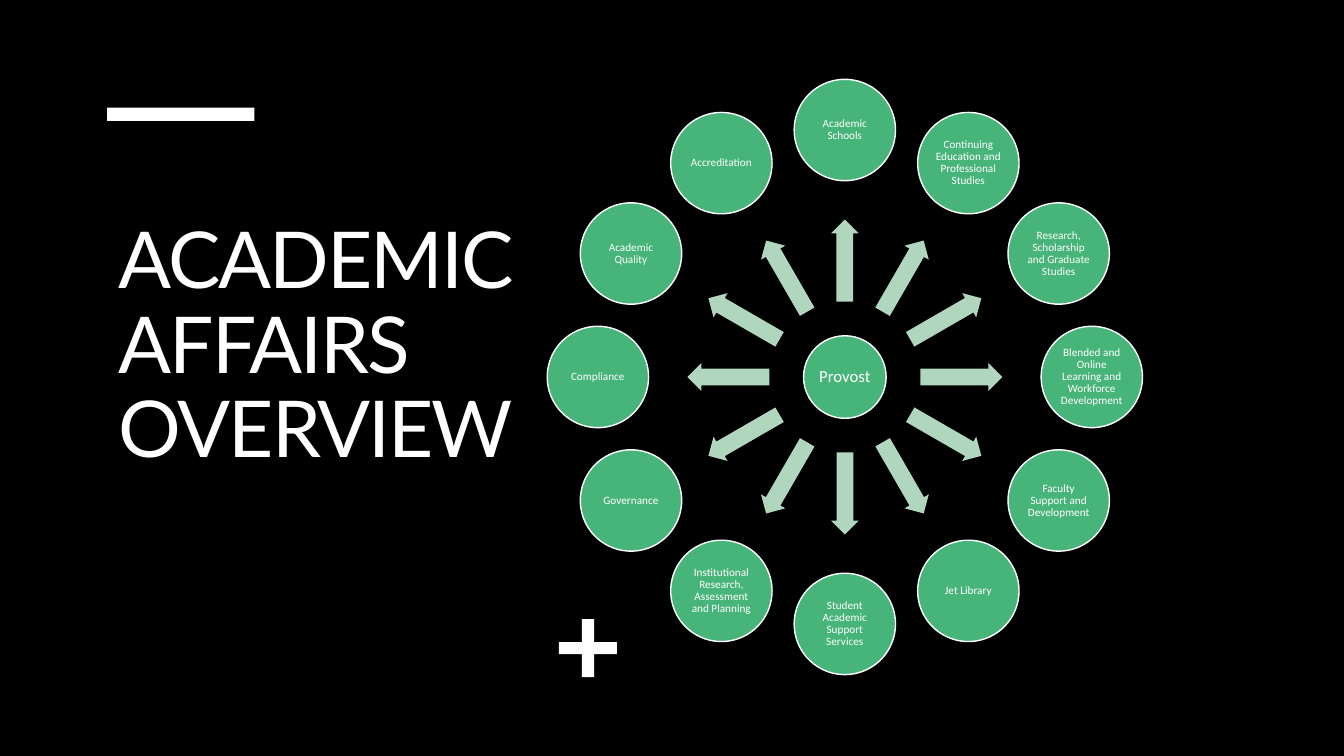
"""Draw a hub-and-spoke overview of academic affairs."""
from math import cos, radians, sin
from typing import Any, NamedTuple

from pptx import Presentation
from pptx.dml.color import RGBColor
from pptx.enum.shapes import MSO_SHAPE as Kind
from pptx.enum.text import MSO_ANCHOR as Anchor, PP_ALIGN as Align
from pptx.util import Pt

BLACK = RGBColor(0x00, 0x00, 0x00)
WHITE = RGBColor(0xFF, 0xFF, 0xFF)
GREEN = RGBColor(0x47, 0xB4, 0x79)
PALE = RGBColor(0xB1, 0xD6, 0xBE)

HUB_X, HUB_Y = 603.5, 269.3
RING, REACH = 176.4, 83.2
UNITS = (
    "Academic Schools",
    "Continuing Education and Professional Studies",
    "Research, Scholarship and Graduate Studies",
    "Blended and Online Learning and Workforce Development",
    "Faculty Support and Development",
    "Jet Library",
    "Student Academic Support Services",
    "Institutional Research, Assessment and Planning",
    "Governance",
    "Compliance",
    "Academic Quality",
    "Accreditation",
)


class Mark(NamedTuple):
    """A plain filled shape, placed by its middle."""
    kind: Kind
    x: float
    y: float
    width: float
    height: float
    fill: RGBColor
    turn: float = 0
    bends: tuple[float, ...] = ()


class Disc(NamedTuple):
    """A labelled circle, placed by its middle."""
    text: str
    x: float
    y: float
    size: float
    points: float
    inset: float


def apply(target: Any, values: dict[str, Any]) -> None:
    """Set each named value on the target."""
    for name, value in values.items():
        setattr(target, name, value)


def draw_mark(shapes: Any, mark: Mark) -> Any:
    """Add one filled shape without an outline."""
    shape = shapes.add_shape(
        mark.kind, Pt(mark.x - mark.width / 2), Pt(mark.y - mark.height / 2),
        Pt(mark.width), Pt(mark.height))
    shape.shadow.inherit = False
    shape.rotation = mark.turn
    shape.fill.solid()
    shape.fill.fore_color.rgb = mark.fill
    shape.line.fill.background()
    for place, bend in enumerate(mark.bends):
        shape.adjustments[place] = bend
    return shape


def write(shape: Any, text: str, face: str, points: float,
          align: Align, frame: dict[str, Any]) -> Any:
    """Put white text in a shape and return its run."""
    apply(shape.text_frame, {"word_wrap": True, **frame})
    para = shape.text_frame.paragraphs[0]
    apply(para, {"alignment": align, "line_spacing": 0.9})
    run = para.add_run()
    run.text = text
    apply(run.font, {"name": face, "size": Pt(points)})
    run.font.color.rgb = WHITE
    return run


def draw_disc(shapes: Any, disc: Disc) -> None:
    """Add one green circle with a white rim and a label."""
    shape = draw_mark(shapes, Mark(
        Kind.OVAL, disc.x, disc.y, disc.size, disc.size, GREEN))
    shape.line.color.rgb = WHITE
    shape.line.width = Pt(1)
    sides = ("left", "top", "right", "bottom")
    frame = {f"margin_{side}": Pt(disc.inset) for side in sides}
    write(shape, disc.text, "Calibri", disc.points, Align.CENTER,
          {"vertical_anchor": Anchor.MIDDLE, **frame})


def draw_title(shapes: Any) -> None:
    """Add the slide title."""
    box = shapes.add_textbox(Pt(77.8), Pt(128.2), Pt(306), Pt(214.5))
    run = write(box, "ACADEMIC AFFAIRS OVERVIEW", "Lato", 56, Align.LEFT,
                {"vertical_anchor": Anchor.BOTTOM})
    run._r.get_or_add_rPr().set("spc", "-150")


def draw_wheel(shapes: Any) -> None:
    """Add the hub and its ring of arrows and units."""
    draw_disc(shapes, Disc("Provost", HUB_X, HUB_Y, 59, 12, 1.2))
    step = 360 / len(UNITS)
    for place, unit in enumerate(UNITS):
        turn = place * step - 90
        across, down = cos(radians(turn)), sin(radians(turn))
        draw_mark(shapes, Mark(
            Kind.RIGHT_ARROW, HUB_X + REACH * across, HUB_Y + REACH * down,
            58.7, 20, PALE, turn % 360, (0.6, 0.5)))
        draw_disc(shapes, Disc(
            unit, HUB_X + RING * across, HUB_Y + RING * down, 72.4, 8, 0.8))


def main() -> None:
    """Build and save the slide."""
    deck = Presentation()
    apply(deck, {"slide_width": Pt(960), "slide_height": Pt(540)})
    slide = deck.slides.add_slide(deck.slide_layouts[6])
    slide.background.fill.solid()
    slide.background.fill.fore_color.rgb = BLACK
    shapes = slide.shapes
    draw_mark(shapes, Mark(Kind.CROSS, 420, 463, 41.4, 41.4, WHITE,
                           bends=(0.395,)))
    draw_mark(shapes, Mark(Kind.RECTANGLE, 129.2, 81.6, 105.2, 9.6, WHITE))
    draw_title(shapes)
    draw_wheel(shapes)
    deck.save("out.pptx")


if __name__ == "__main__":
    main()
